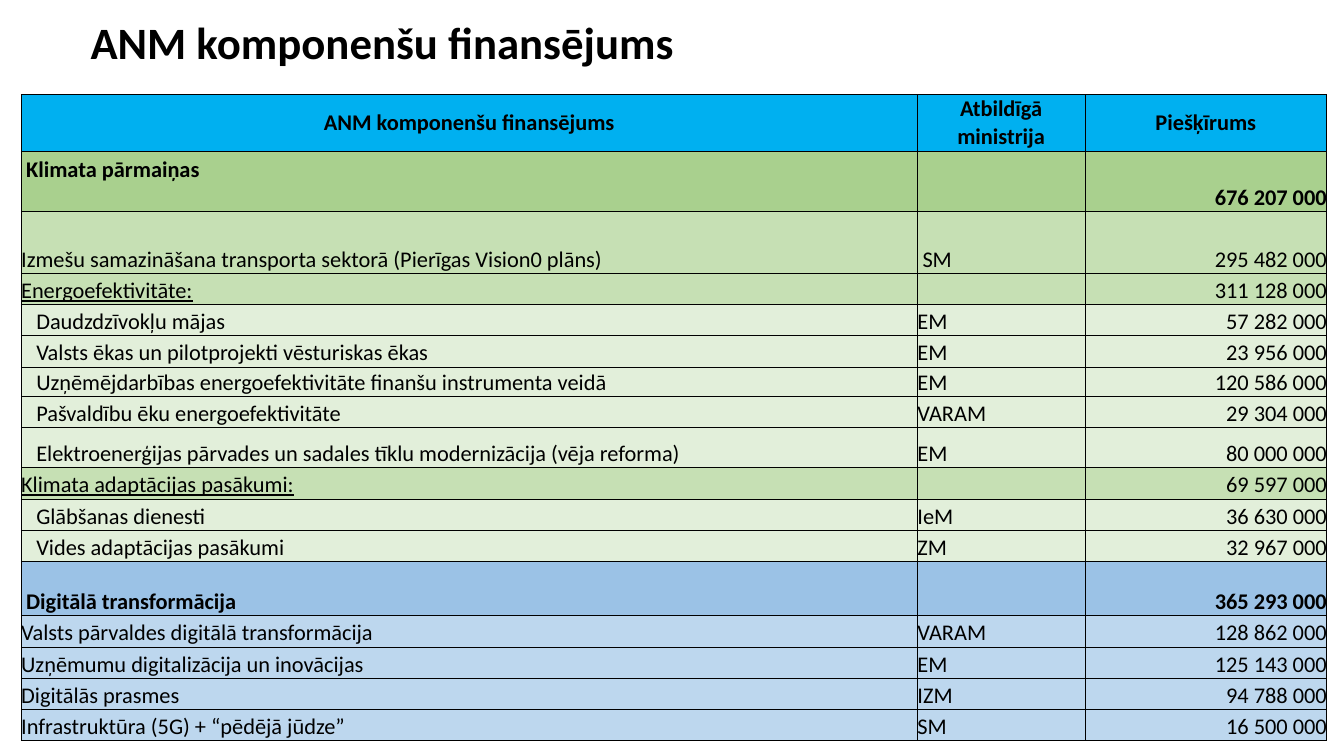
from lxml.etree import SubElement
from pptx import Presentation
from pptx.dml.color import RGBColor
from pptx.enum.text import MSO_ANCHOR as Anchor, PP_ALIGN as Align
from pptx.oxml.ns import qn
from pptx.util import Inches, Pt

COLORS = {
    "text": "000000",
    "border": "000000",
    "header": "00B0F0",
    "climate": "A9D08E",
    "climate_group": "C6E0B4",
    "climate_item": "E2EFDA",
    "digital": "9BC2E6",
    "digital_item": "BDD7EE",
}
TITLE = "ANM komponenšu finansējums"
COLUMN_WIDTHS = [8.89, 1.66, 2.4]
ROW_HEIGHT = 0.31
SECTION_INDENT = 0.05
ITEM_INDENT = 0.15

# Fill, row height, component, ministry, allocation
ROWS = [
    ("header", 0.56, TITLE, "Atbildīgā ministrija", "Piešķīrums"),
    ("climate", 0.6, "Klimata pārmaiņas", "", "676 207 000"),
    ("climate_group", 0.61, "Izmešu samazināšana transporta sektorā (Pierīgas Vision0 plāns)",
     "SM", "295 482 000"),
    ("climate_group", ROW_HEIGHT, "Energoefektivitāte:", "", "311 128 000"),
    ("climate_item", ROW_HEIGHT, "Daudzdzīvokļu mājas", "EM", "57 282 000"),
    ("climate_item", ROW_HEIGHT, "Valsts ēkas un pilotprojekti vēsturiskas ēkas",
     "EM", "23 956 000"),
    ("climate_item", 0.29, "Uzņēmējdarbības energoefektivitāte finanšu instrumenta veidā",
     "EM", "120 586 000"),
    ("climate_item", ROW_HEIGHT, "Pašvaldību ēku energoefektivitāte", "VARAM", "29 304 000"),
    ("climate_item", 0.4,
     "Elektroenerģijas pārvades un sadales tīklu modernizācija (vēja reforma)",
     "EM", "80 000 000"),
    ("climate_group", ROW_HEIGHT, "Klimata adaptācijas pasākumi:", "", "69 597 000"),
    ("climate_item", ROW_HEIGHT, "Glābšanas dienesti", "IeM", "36 630 000"),
    ("climate_item", ROW_HEIGHT, "Vides adaptācijas pasākumi", "ZM", "32 967 000"),
    ("digital", 0.54, "Digitālā transformācija", "", "365 293 000"),
    ("digital_item", ROW_HEIGHT, "Valsts pārvaldes digitālā transformācija",
     "VARAM", "128 862 000"),
    ("digital_item", ROW_HEIGHT, "Uzņēmumu digitalizācija un inovācijas", "EM", "125 143 000"),
    ("digital_item", ROW_HEIGHT, "Digitālās prasmes", "IZM", "94 788 000"),
    ("digital_item", ROW_HEIGHT, "Infrastruktūra (5G) + “pēdējā jūdze”", "SM", "16 500 000"),
]


def write_text(frame, text, size=16, bold=False, underline=False,
               align=Align.LEFT, line_spacing=None):
    paragraph = frame.paragraphs[0]
    paragraph.alignment = align
    paragraph.line_spacing = line_spacing
    run = paragraph.add_run()
    run.text = text
    font = run.font
    font.name = "Calibri"
    font.size = Pt(size)
    font.bold = bold
    font.underline = underline
    font.color.rgb = RGBColor.from_string(COLORS["text"])


def add_borders(cell):
    properties = cell._tc.get_or_add_tcPr()
    for side in ("a:lnL", "a:lnR", "a:lnT", "a:lnB"):
        line = SubElement(properties, qn(side), w=str(Pt(0.5)))
        fill = SubElement(line, qn("a:solidFill"))
        SubElement(fill, qn("a:srgbClr"), val=COLORS["border"])


def format_cell(cell, kind):
    cell.margin_left = cell.margin_right = cell.margin_top = cell.margin_bottom = 0
    cell.vertical_anchor = Anchor.MIDDLE if kind == "header" else Anchor.BOTTOM
    add_borders(cell)
    cell.fill.solid()
    cell.fill.fore_color.rgb = RGBColor.from_string(COLORS[kind])


def add_title(slide, left, top, width, height):
    box = slide.shapes.add_textbox(Inches(left), Inches(top), Inches(width), Inches(height))
    frame = box.text_frame
    frame.word_wrap = True
    frame.vertical_anchor = Anchor.MIDDLE
    write_text(frame, TITLE, size=32, bold=True, line_spacing=0.9)


def add_funding_table(slide, left, top, width, height):
    shape = slide.shapes.add_table(len(ROWS), len(COLUMN_WIDTHS), Inches(left), Inches(top),
                                   Inches(width), Inches(height))
    table = shape.table
    table.first_row = table.horz_banding = False
    for column, column_width in zip(table.columns, COLUMN_WIDTHS):
        column.width = Inches(column_width)

    for row, (kind, row_height, *texts) in zip(table.rows, ROWS):
        row.height = Inches(row_height)
        bold = kind in ("header", "climate", "digital")
        aligns = [Align.CENTER] * 3 if kind == "header" else [Align.LEFT, Align.LEFT, Align.RIGHT]
        for cell, text, align in zip(row.cells, texts, aligns):
            format_cell(cell, kind)
            write_text(cell.text_frame, text, bold=bold, align=align,
                       underline=text.endswith(":"))

        # Indents of the component names
        name_cell = row.cells[0]
        if kind == "climate_item":
            name_cell.margin_left = Inches(ITEM_INDENT)
        elif kind in ("climate", "digital"):
            name_cell.margin_left = Inches(SECTION_INDENT)

    # The first section name sits higher, and the first ministry is set in
    table.cell(1, 0).margin_bottom = Inches(0.28)
    table.cell(2, 1).margin_left = Inches(SECTION_INDENT)


def main():
    presentation = Presentation()
    presentation.slide_width = Inches(13.33)
    presentation.slide_height = Inches(7.5)
    slide = presentation.slides.add_slide(presentation.slide_layouts[6])
    add_funding_table(slide, 0.21, 0.94, sum(COLUMN_WIDTHS), sum(row[1] for row in ROWS))
    add_title(slide, 0.8, 0.19, 11.5, 0.52)
    presentation.save("out.pptx")


if __name__ == "__main__":
    main()
